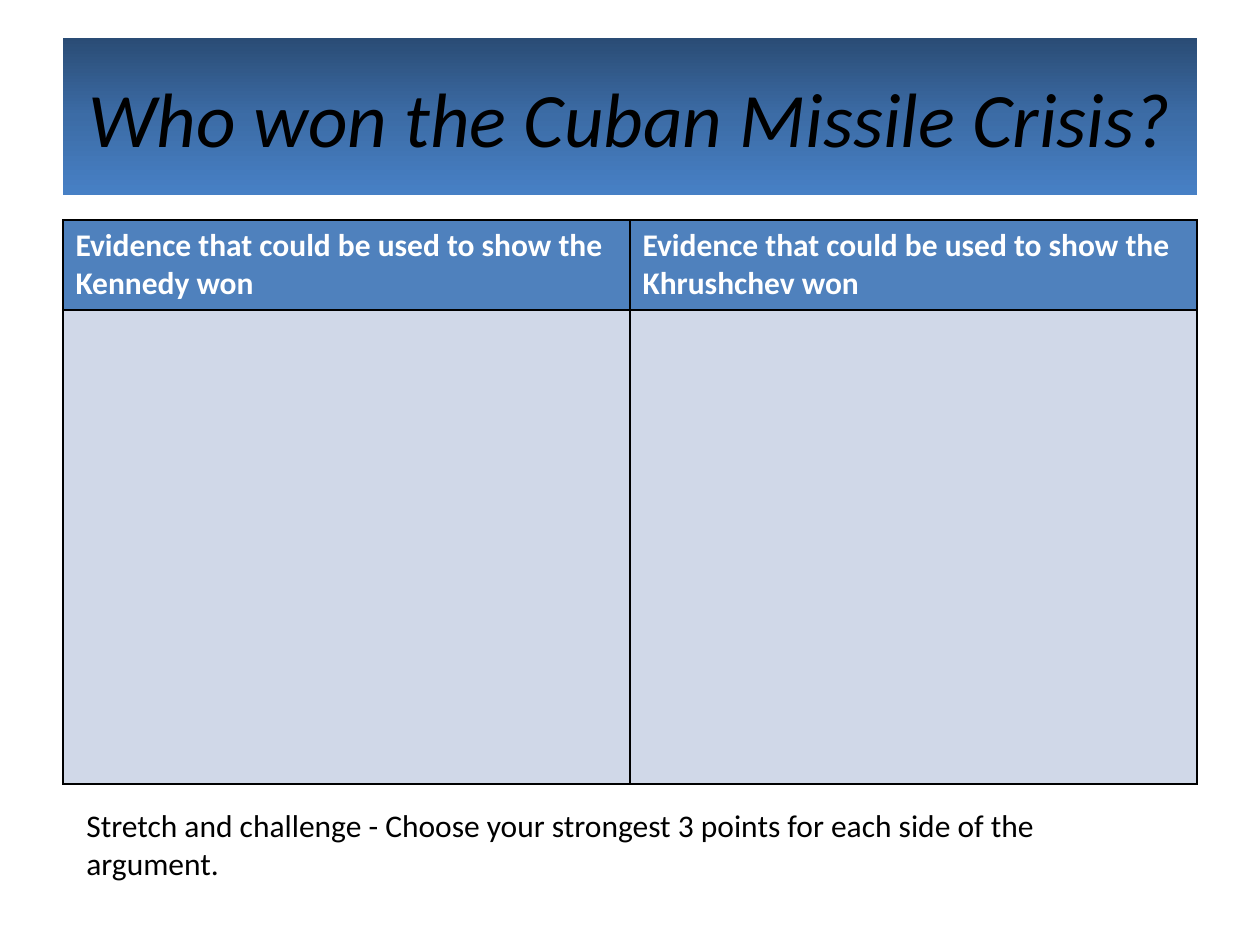
"""Builds a two-column debate slide with a title banner, evidence table and extension task."""
from copy import deepcopy
from dataclasses import dataclass

from lxml import etree
from pptx import Presentation
from pptx.dml.color import RGBColor
from pptx.enum.text import MSO_ANCHOR, PP_ALIGN
from pptx.oxml.ns import qn
from pptx.util import Pt

SCALE = 914400 / 126
LEFT, CENTER = PP_ALIGN.LEFT, PP_ALIGN.CENTER
TOP, MIDDLE = MSO_ANCHOR.TOP, MSO_ANCHOR.MIDDLE
TITLE_ONLY = 5


@dataclass(frozen=True)
class Theme:
    font: str = "Calibri"
    title_size: int = 44
    text_size: int = 18
    border_width: int = 1
    ink: str = "000000"
    paper: str = "FFFFFF"
    header: str = "4F81BD"
    body: str = "D0D8E8"
    banner: tuple = ((0, "2A4C75"), (0.5, "3C6CA6"), (1, "4780C5"))


@dataclass(frozen=True)
class Box:
    x: int
    y: int
    w: int
    h: int

    def emu(self) -> list:
        return [px(n) for n in (self.x, self.y, self.w, self.h)]


THEME = Theme()
BANNER = Box(63, 38, 1134, 157)
TABLE = Box(63, 220, 1134, 564)
TASK = Box(74, 800, 1111, 89)
ROW_HEIGHTS = (90, 474)
HEADINGS = (
    "Evidence that could be used to show the Kennedy won",
    "Evidence that could be used to show the Khrushchev won",
)


def px(n: int) -> int:
    return round(n * SCALE)


def rgb(value: str) -> RGBColor:
    return RGBColor.from_string(value)


def write(tf, text: str, color: str, size: int, align=LEFT, **styles) -> None:
    tf.word_wrap = True
    p = tf.paragraphs[0]
    p.alignment = align
    r = p.add_run()
    r.text = text
    formats = {"name": THEME.font, "size": Pt(size), **styles}
    for name, value in formats.items():
        setattr(r.font, name, value)
    r.font.color.rgb = rgb(color)


def paint_gradient(fill, stops: tuple) -> None:
    fill.gradient()
    fill.gradient_angle = 270
    first = next(fill._xPr.iter(qn("a:gs")))
    first.addnext(deepcopy(first))
    for stop, (position, color) in zip(fill.gradient_stops, stops):
        stop.position = position
        stop.color.rgb = rgb(color)


def add_banner(s, box: Box, text: str) -> None:
    sp = s.shapes.title
    sp.left, sp.top, sp.width, sp.height = box.emu()
    paint_gradient(sp.fill, THEME.banner)
    sp.text_frame.vertical_anchor = MIDDLE
    write(sp.text_frame, text, THEME.ink, THEME.title_size, CENTER, italic=True)


def style_cell(cell, color: str) -> None:
    tcPr = cell._tc.get_or_add_tcPr()
    for side in ("lnL", "lnR", "lnT", "lnB"):
        ln = etree.SubElement(tcPr, qn(f"a:{side}"), w=str(Pt(THEME.border_width)))
        fill = etree.SubElement(ln, qn("a:solidFill"))
        etree.SubElement(fill, qn("a:srgbClr"), val=THEME.ink)
    cell.fill.solid()
    cell.fill.fore_color.rgb = rgb(color)
    cell.vertical_anchor = TOP


def add_evidence_table(s, box: Box, headings: tuple) -> None:
    table = s.shapes.add_table(len(ROW_HEIGHTS), len(headings), *box.emu()).table
    for row, height in zip(table.rows, ROW_HEIGHTS):
        row.height = px(height)
    for i, heading in enumerate(headings):
        head, body = table.cell(0, i), table.cell(1, i)
        style_cell(head, THEME.header)
        style_cell(body, THEME.body)
        write(head.text_frame, heading, THEME.paper, THEME.text_size, bold=True)


def add_task(s, box: Box, text: str) -> None:
    sp = s.shapes.add_textbox(*box.emu())
    sp.fill.solid()
    sp.fill.fore_color.rgb = rgb(THEME.paper)
    write(sp.text_frame, text, THEME.ink, THEME.text_size)


def main() -> None:
    prs = Presentation()
    prs.slide_width, prs.slide_height = px(1260), px(945)
    s = prs.slides.add_slide(prs.slide_layouts[TITLE_ONLY])
    add_banner(s, BANNER, "Who won the Cuban Missile Crisis?")
    add_evidence_table(s, TABLE, HEADINGS)
    add_task(
        s,
        TASK,
        "Stretch and challenge - Choose your strongest 3 points for each side of the argument.",
    )
    prs.save("out.pptx")


if __name__ == "__main__":
    main()
